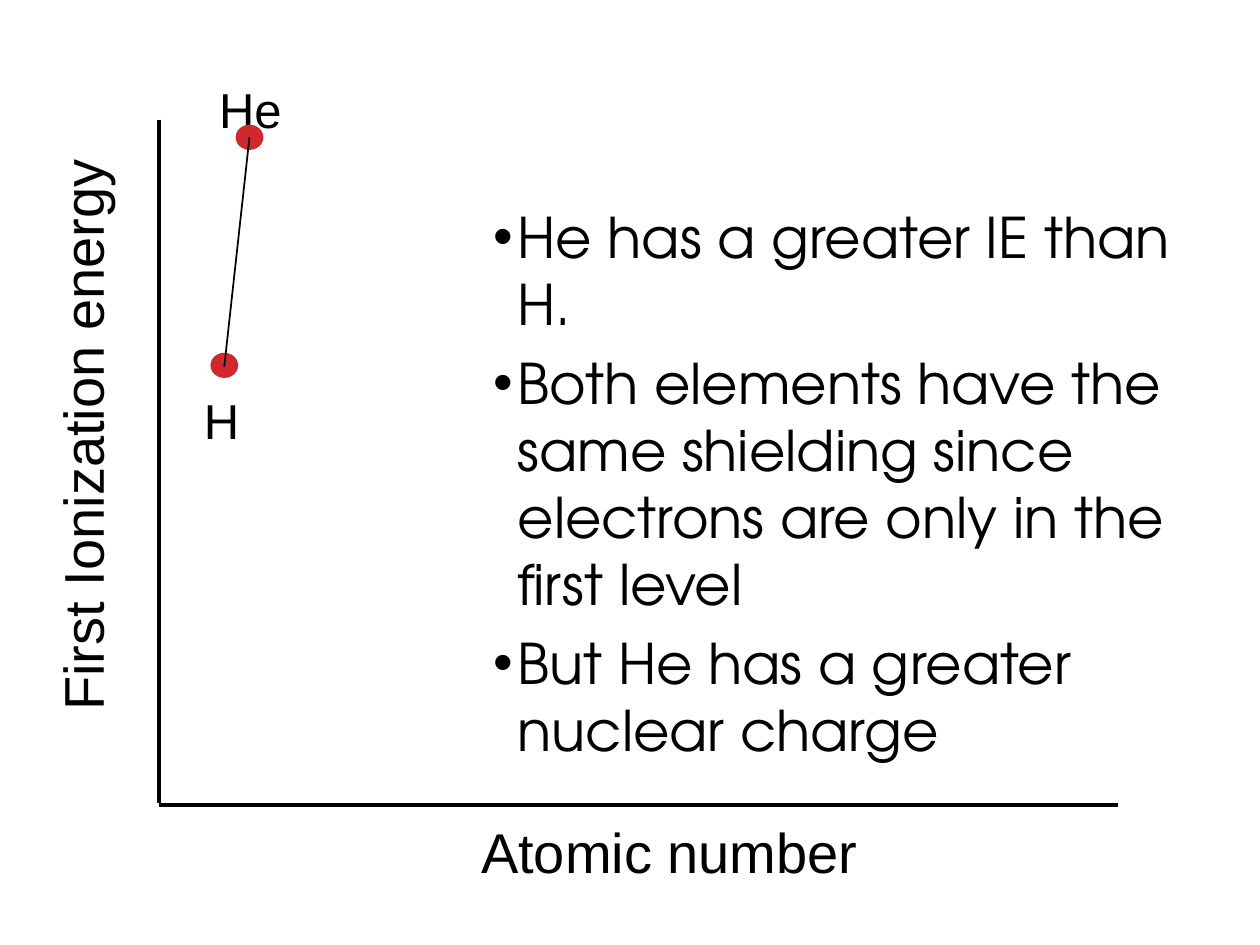
"""Build a slide comparing the first ionization energies of H and He."""
from dataclasses import dataclass

from lxml.etree import SubElement
from pptx import Presentation
from pptx.dml.color import RGBColor as Rgb
from pptx.enum.shapes import MSO_CONNECTOR as Link, MSO_SHAPE as Kind
from pptx.oxml.ns import qn
from pptx.slide import Slide
from pptx.text.text import _Paragraph as Para
from pptx.util import Inches, Pt


@dataclass(frozen=True)
class Theme:
    ink: Rgb = Rgb(0, 0, 0)
    dot: Rgb = Rgb(0xD1, 0x28, 0x2E)
    sans: str = "Arial"
    body: str = "TeX Gyre Adventor"
    big: int = 32
    mid: int = 28
    gap: float = 6.4


@dataclass(frozen=True)
class Label:
    text: str
    box: tuple[float, float, float, float]
    size: int
    turn: int = 0


@dataclass(frozen=True)
class Line:
    start: tuple[float, float]
    end: tuple[float, float]
    width: float


@dataclass(frozen=True)
class Dot:
    x: float
    y: float
    wide: float = 0.22
    high: float = 0.2


THEME = Theme()
AXES = [Line((1.26, 0.95), (1.26, 6.37), 2), Line((8.87, 6.39), (1.26, 6.39), 2)]
LABELS = [
    Label("First Ionization energy", (-1.66, 3.12, 4.61, 0.63), THEME.big, 270),
    Label("Atomic number", (3.72, 6.44, 3.23, 0.63), THEME.big),
    Label("He", (1.64, 0.58, 0.73, 0.57), THEME.mid),
    Label("H", (1.52, 3.05, 0.38, 0.57), THEME.mid),
]
DOTS = [Dot(1.98, 1.09), Dot(1.78, 2.9)]
TREND = Line((1.78, 2.91), (1.98, 1.09), 1)
POINTS = [
    "He has a greater IE than H.",
    "Both elements have the same shielding since electrons are only in the first level",
    "But He has a greater nuclear charge",
]


def write(para: Para, text: str, name: str, size: int) -> None:
    run = para.add_run()
    run.text = text
    for key, value in {"name": name, "size": Pt(size)}.items():
        setattr(run.font, key, value)
    run.font.color.rgb = THEME.ink


def draw_line(slide: Slide, line: Line) -> None:
    ends = map(Inches, line.start + line.end)
    link = slide.shapes.add_connector(Link.STRAIGHT, *ends)
    link.line.color.rgb = THEME.ink
    link.line.width = Pt(line.width)
    SubElement(link._element.spPr, qn("a:effectLst"))


def draw_label(slide: Slide, label: Label) -> None:
    box = slide.shapes.add_textbox(*map(Inches, label.box))
    box.rotation = label.turn
    box.text_frame.word_wrap = True
    write(box.text_frame.paragraphs[0], label.text, THEME.sans, label.size)


def draw_dot(slide: Slide, dot: Dot) -> None:
    place = (dot.x - dot.wide / 2, dot.y - dot.high / 2, dot.wide, dot.high)
    shape = slide.shapes.add_shape(Kind.OVAL, *map(Inches, place))
    shape.shadow.inherit = False
    shape.fill.solid()
    shape.fill.fore_color.rgb = THEME.dot
    shape.line.fill.background()


def draw_points(slide: Slide, points: list[str]) -> None:
    box = slide.shapes.add_textbox(*map(Inches, (3.63, 1.56, 5.99, 4.84)))
    frame = box.text_frame
    frame.word_wrap = True
    for i, text in enumerate(points):
        para = frame.add_paragraph() if i else frame.paragraphs[0]
        para.space_before = Pt(THEME.gap if i else 0)
        props = para._p.get_or_add_pPr()
        for key, value in {"marL": 0.38, "indent": -0.19}.items():
            props.set(key, str(Inches(value)))
        SubElement(props, qn("a:buFont"), typeface=THEME.sans)
        SubElement(props, qn("a:buChar"), char="•")
        write(para, text, THEME.body, THEME.big)


def main() -> None:
    deck = Presentation()
    deck.slide_width, deck.slide_height = Inches(10), Inches(7.5)
    slide = deck.slides.add_slide(deck.slide_layouts[6])
    for axis in AXES:
        draw_line(slide, axis)
    for label in LABELS:
        draw_label(slide, label)
    for dot in DOTS:
        draw_dot(slide, dot)
    draw_points(slide, POINTS)
    draw_line(slide, TREND)
    deck.save("out.pptx")


if __name__ == "__main__":
    main()
